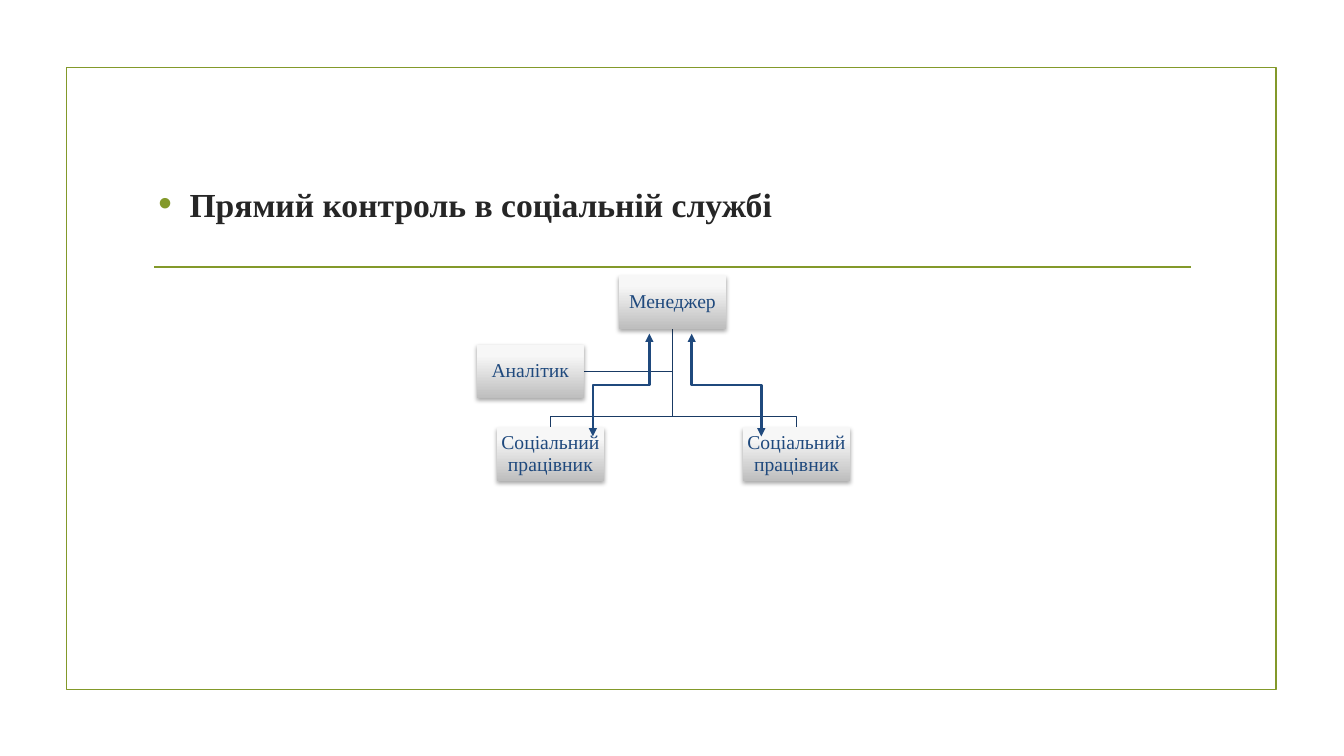
from copy import deepcopy
from dataclasses import dataclass

from lxml.etree import SubElement
from pptx import Presentation
from pptx.dml.color import RGBColor
from pptx.enum.shapes import MSO_CONNECTOR as Link, MSO_SHAPE as Preset
from pptx.enum.text import MSO_ANCHOR as Anchor, MSO_AUTO_SIZE as Fit, PP_ALIGN as Align
from pptx.oxml.ns import qn
from pptx.util import Inches, Pt


@dataclass(frozen=True)
class Theme:
    """Colours, font and sizes of the slide."""
    font: str = "Times New Roman"
    accent: str = "83992A"
    heading: str = "262626"
    label: str = "1F497D"
    branch: str = "193A64"
    shadow: str = "000000"
    gradient: tuple = ((0, "BEBEBE"), (0.8, "F7F7F7"), (1, "F8F8F8"))
    heading_size: float = 24
    label_size: float = 14
    rule_width: float = 1.25
    branch_width: float = 0.75
    arrow_width: float = 1.75


class ControlSlide:
    """Draws on one slide, on a grid of tenths of an inch."""

    def __init__(self, presentation, theme):
        """Add a title-only slide."""
        self.theme = theme
        self.slide = presentation.slides.add_slide(presentation.slide_layouts[5])
        self.shapes = self.slide.shapes

    def grid(self, *cells):
        """Turn grid cells into lengths."""
        return [Inches(cell / 10) for cell in cells]

    def add_xml(self, parent, tag, **attributes):
        """Append a drawing element."""
        return SubElement(parent, qn(f"a:{tag}"), attributes)

    def outline(self, shape, color, width):
        """Set the line of a shape."""
        shape.line.color.rgb = RGBColor.from_string(color)
        shape.line.width = Pt(width)

    def add_text(self, paragraph, text, size, color, bold=False):
        """Add one formatted run."""
        run = paragraph.add_run()
        run.text = text
        run.font.name = self.theme.font
        run.font.size = Pt(size)
        run.font.bold = bold
        run.font.color.rgb = RGBColor.from_string(color)

    def frame(self, left, top, width, height):
        """Draw the border of the slide."""
        shape = self.shapes.add_shape(Preset.RECTANGLE, *self.grid(left, top, width, height))
        shape.shadow.inherit = False
        shape.fill.background()
        self.outline(shape, self.theme.accent, self.theme.rule_width)

    def rule(self, left, right, top):
        """Draw a horizontal line."""
        line = self.shapes.add_connector(Link.STRAIGHT, *self.grid(left, top, right, top))
        self.outline(line, self.theme.accent, self.theme.rule_width)
        self.add_xml(line._element.spPr, "effectLst")

    def heading(self, text, left, top, width, height):
        """Fill the title as a bulleted line."""
        title = self.shapes.title
        title.left, title.top, title.width, title.height = self.grid(left, top, width, height)
        frame = title.text_frame
        frame.word_wrap = True
        frame.auto_size = Fit.NONE
        frame.vertical_anchor = Anchor.TOP
        paragraph = frame.paragraphs[0]
        paragraph.alignment = Align.LEFT
        properties = paragraph._p.get_or_add_pPr()
        properties.set("marL", str(Inches(0.31)))
        properties.set("indent", str(-Inches(0.31)))
        color = self.add_xml(properties, "buClr")
        self.add_xml(color, "srgbClr", val=self.theme.accent)
        self.add_xml(properties, "buSzPct", val="115000")
        self.add_xml(properties, "buFont", typeface="Arial")
        self.add_xml(properties, "buChar", char="•")
        self.add_text(paragraph, text, self.theme.heading_size, self.theme.heading, bold=True)

    def branch(self, start, *points):
        """Draw an open line through the points."""
        builder = self.shapes.build_freeform(*self.grid(*start), scale=1.0)
        builder.add_line_segments([self.grid(*point) for point in points], close=False)
        shape = builder.convert_to_shape()
        shape.shadow.inherit = False
        shape.fill.background()
        self.outline(shape, self.theme.branch, self.theme.branch_width)

    def role(self, text, left, top, width, height):
        """Draw a shaded box with a centred label."""
        shape = self.shapes.add_shape(Preset.RECTANGLE, *self.grid(left, top, width, height))
        shape.line.fill.background()
        shape.fill.gradient()
        shape.fill.gradient_angle = 90
        properties = shape._element.spPr
        stops = properties.find(qn("a:gradFill")).find(qn("a:gsLst"))
        stops.append(deepcopy(stops[-1]))
        for stop, (position, color) in zip(shape.fill.gradient_stops, self.theme.gradient):
            stop.position = position
            stop.color.rgb = RGBColor.from_string(color)
        shape.shadow.inherit = False
        shadow = self.add_xml(properties.find(qn("a:effectLst")), "outerShdw", blurRad="40000",
                              dist="23000", dir="5400000", rotWithShape="0")
        color = self.add_xml(shadow, "srgbClr", val=self.theme.shadow)
        self.add_xml(color, "alpha", val="35000")
        frame = shape.text_frame
        frame.word_wrap = True
        frame.vertical_anchor = Anchor.MIDDLE
        frame.margin_left = frame.margin_right = frame.margin_top = frame.margin_bottom = Inches(0.01)
        paragraph = frame.paragraphs[0]
        paragraph.alignment = Align.CENTER
        paragraph.line_spacing = 0.9
        self.add_text(paragraph, text, self.theme.label_size, self.theme.label)

    def control(self, start_x, start_y, end_x, end_y):
        """Draw a two-headed elbow that leaves vertically."""
        middle_x, middle_y = (start_x + end_x) / 2, (start_y + end_y) / 2
        half_width, half_height = (end_y - start_y) / 2, abs(end_x - start_x) / 2
        side = 1 if end_x > start_x else -1
        arrow = self.shapes.add_connector(Link.ELBOW, *self.grid(
            middle_x + side * half_width, middle_y - half_height,
            middle_x - side * half_width, middle_y + half_height))
        properties = arrow._element.spPr
        properties.find(qn("a:xfrm")).set("rot", str((180 + side * 90) * 60000))
        self.outline(arrow, self.theme.label, self.theme.arrow_width)
        line = properties.find(qn("a:ln"))
        for end in ("headEnd", "tailEnd"):
            self.add_xml(line, end, type="triangle")
        self.add_xml(properties, "effectLst")


def main():
    """Build and save the slide."""
    presentation = Presentation()
    presentation.slide_width, presentation.slide_height = Inches(13.33), Inches(7.5)
    page = ControlSlide(presentation, Theme())
    page.frame(6.6, 6.7, 120, 61.7)
    page.rule(15.3, 118.1, 26.5)
    page.heading("Прямий контроль в соціальній службі", 14.7, 17.7, 104.5, 6)

    width, height = 10.6, 5.3
    trunk, manager_top, analyst_top, worker_top, fork = 66.7, 27.3, 34.2, 42.4, 41.3
    analyst_left, worker_lefts = 47.3, (49.3, 73.7)
    root = (trunk, manager_top + height)
    analyst_middle = analyst_top + height / 2
    page.branch(root, (trunk, analyst_middle), (analyst_left + width, analyst_middle))
    for left in worker_lefts:
        center = left + width / 2
        page.branch(root, (trunk, fork), (center, fork), (center, worker_top))

    page.role("Менеджер", trunk - width / 2, manager_top, width, height)
    for left in worker_lefts:
        page.role("Соціальний працівник", left, worker_top, width, height)
    page.role("Аналітик", analyst_left, analyst_top, width, height)
    for start_x, end_x in ((68.6, 75.5), (64.4, 58.8)):
        page.control(start_x, 33.1, end_x, 43.3)
    presentation.save("out.pptx")


if __name__ == "__main__":
    main()
